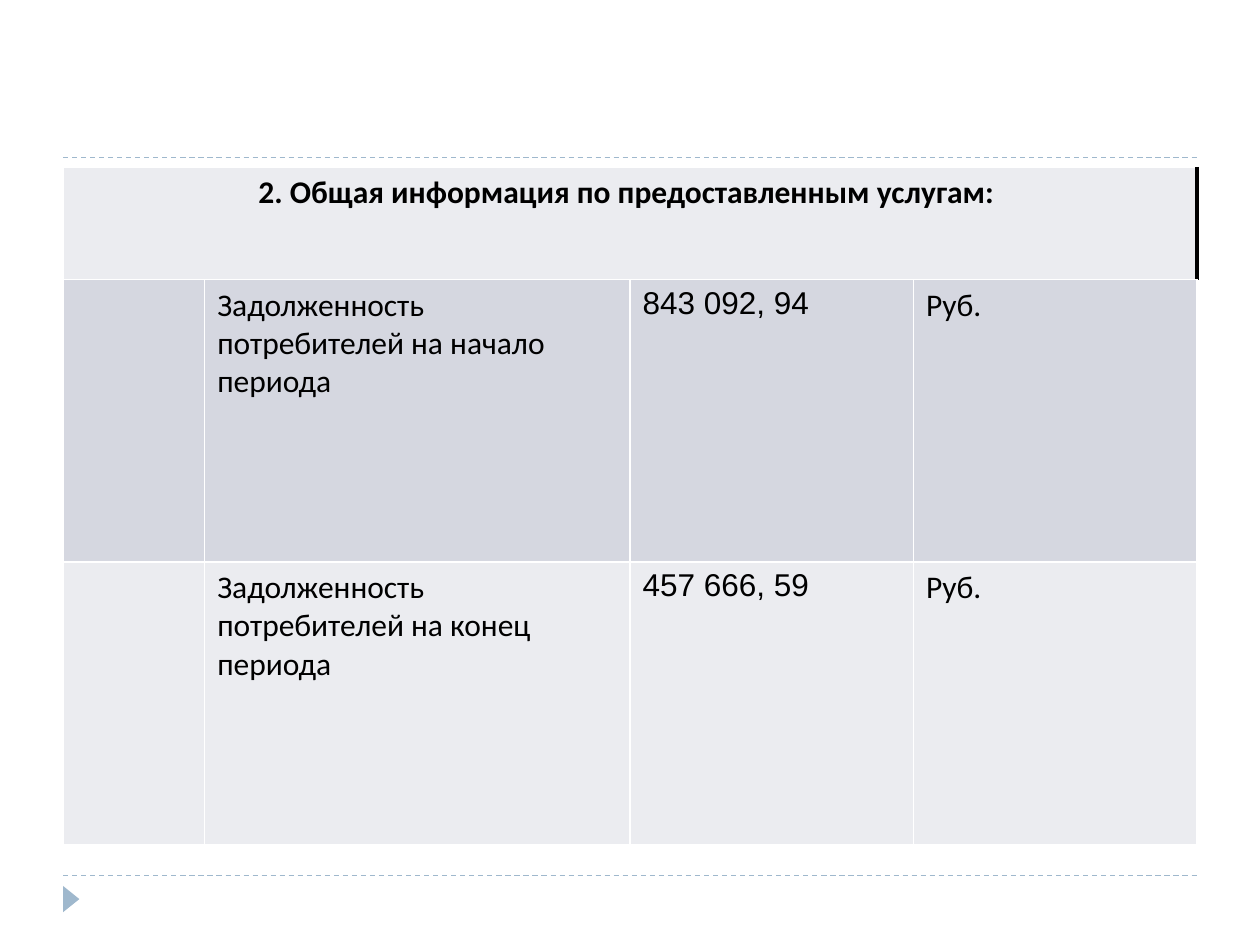
from lxml.etree import SubElement
from pptx import Presentation
from pptx.dml.color import RGBColor
from pptx.enum.dml import MSO_LINE
from pptx.enum.shapes import MSO_CONNECTOR, MSO_SHAPE
from pptx.enum.text import PP_ALIGN
from pptx.oxml.ns import qn
from pptx.util import Cm, Pt

LEFT, WIDTH = 1.27, 22.86
ACCENT, WHITE, BLACK = "9FB8CD", "FFFFFF", "000000"
LIGHT_BAND, DARK_BAND = "EBECF0", "D5D7E0"
HEADING = "2. Общая информация по предоставленным услугам: "
DEBT_ROWS = [
    ("Задолженность потребителей на начало периода", "843 092, 94", "Руб."),
    ("Задолженность потребителей на конец периода", "457 666, 59", "Руб."),
]
COLUMN_SHARES = [1, 3, 2, 2]
ROW_HEIGHTS = [2.26, 5.69, 5.69]


def paint(color_format, color):
    color_format.rgb = RGBColor.from_string(color)


def fill_solid(target, color):
    target.fill.solid()
    paint(target.fill.fore_color, color)


def write_text(text_frame, text, font="Calibri", size=18, bold=False,
               color=BLACK, align=PP_ALIGN.LEFT):
    paragraph = text_frame.paragraphs[0]
    paragraph.alignment = align
    run = paragraph.add_run()
    run.text = text
    run.font.name = font
    run.font.size = Pt(size)
    run.font.bold = bold
    paint(run.font.color, color)


def add_dashed_rule(slide, top):
    rule = slide.shapes.add_connector(
        MSO_CONNECTOR.STRAIGHT, Cm(LEFT), Cm(top), Cm(LEFT + WIDTH), Cm(top))
    paint(rule.line.color, ACCENT)
    rule.line.width = Pt(0.75)
    rule.line.dash_style = MSO_LINE.DASH
    SubElement(rule._element.spPr, qn("a:effectLst"))


def add_page_marker(slide):
    marker = slide.shapes.add_shape(
        MSO_SHAPE.ISOSCELES_TRIANGLE, Cm(1.17), Cm(17.96), Cm(0.53), Cm(0.33))
    marker.rotation = 90
    marker.shadow.inherit = False
    fill_solid(marker, ACCENT)
    marker.line.fill.background()


def set_border(cell, side, color, width):
    properties = cell._tc.get_or_add_tcPr()
    border = SubElement(properties, qn(f"a:ln{side}"), w=str(Pt(width)))
    fill = SubElement(border, qn("a:solidFill"))
    SubElement(fill, qn("a:srgbClr"), val=color)


def style_cell(cell, color, right_border=(WHITE, 1)):
    for side in "LRTB":
        set_border(cell, side, *(right_border if side == "R" else (WHITE, 1)))
    fill_solid(cell, color)


def add_debt_table(slide):
    table = slide.shapes.add_table(
        len(ROW_HEIGHTS), len(COLUMN_SHARES),
        Cm(LEFT), Cm(3.38), Cm(WIDTH), Cm(sum(ROW_HEIGHTS))).table
    for column, share in zip(table.columns, COLUMN_SHARES):
        column.width = Cm(WIDTH * share / sum(COLUMN_SHARES))
    for row, height in zip(table.rows, ROW_HEIGHTS):
        row.height = Cm(height)

    heading = table.cell(0, 0)
    heading.merge(table.cell(0, len(COLUMN_SHARES) - 1))
    style_cell(heading, LIGHT_BAND, right_border=(BLACK, 2.25))
    write_text(heading.text_frame, HEADING, bold=True, align=PP_ALIGN.CENTER)

    for row_index, (label, amount, unit) in enumerate(DEBT_ROWS, start=1):
        for cell in table.rows[row_index].cells:
            style_cell(cell, DARK_BAND if row_index % 2 else LIGHT_BAND)
        write_text(table.cell(row_index, 1).text_frame, label)
        write_text(table.cell(row_index, 2).text_frame, amount, font="Arial")
        write_text(table.cell(row_index, 3).text_frame, unit)


def main():
    presentation = Presentation()
    presentation.slide_width = Cm(25.4)
    presentation.slide_height = Cm(19.05)
    slide = presentation.slides.add_slide(presentation.slide_layouts[6])
    for top in (17.65, 3.18):
        add_dashed_rule(slide, top)
    add_page_marker(slide)
    add_debt_table(slide)
    presentation.save("out.pptx")


if __name__ == "__main__":
    main()
